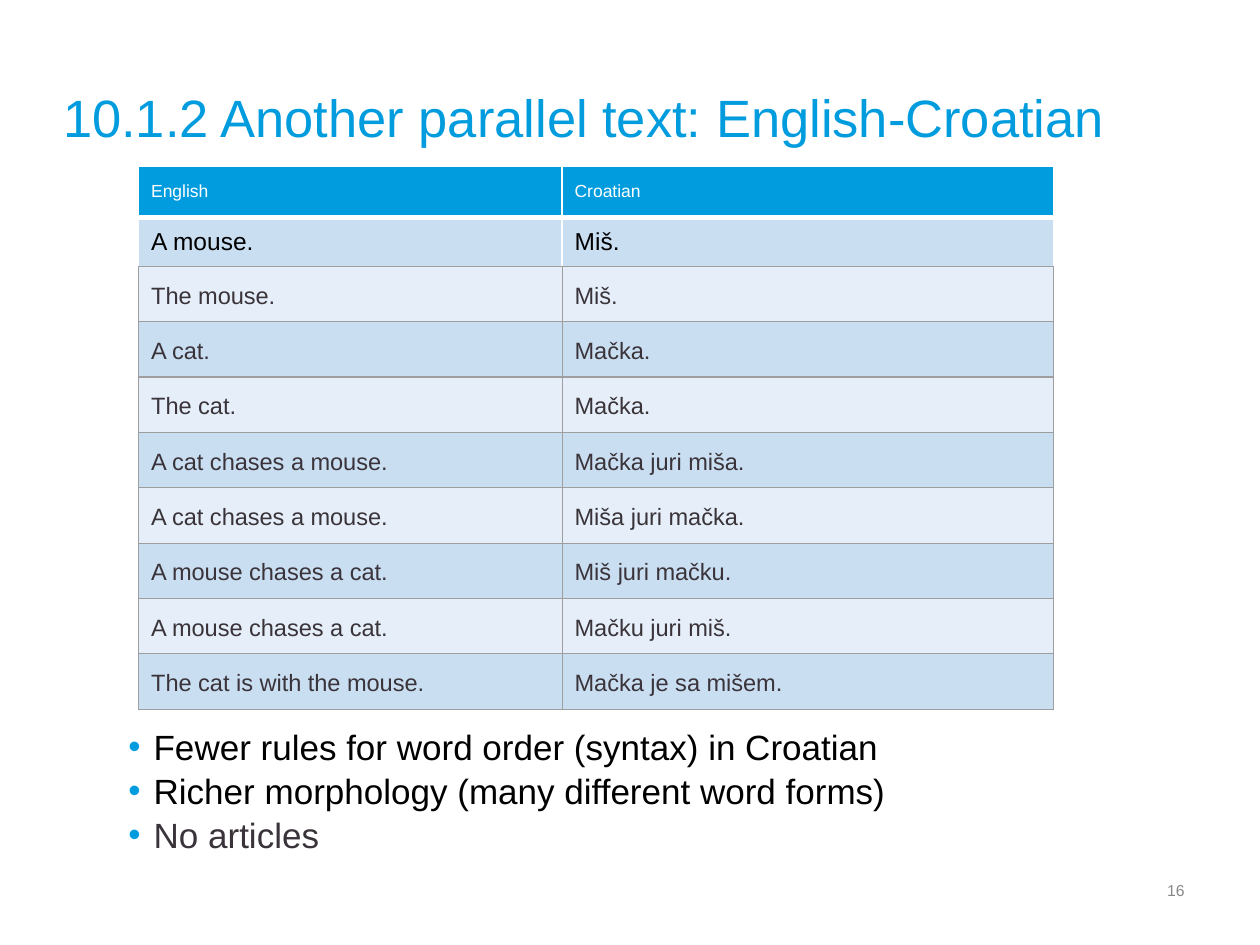
from pptx import Presentation
from pptx.dml.color import RGBColor
from pptx.enum.text import MSO_ANCHOR, MSO_AUTO_SIZE, PP_ALIGN
from pptx.oxml.ns import qn
from pptx.util import Pt
from lxml.etree import SubElement

COLORS = {"blue": "009CDE", "white": "FFFFFF", "black": "000000", "dark": "3A343A",
          "grey": "888888", "rule": "9E9E9E", "band": "CADEF2", "pale": "E6EFF9"}


def style(para, size, color):
    for run in para.runs:
        font = run.font
        font.name, font.size, font.bold = "Arial", Pt(size), False
        font.color.rgb = RGBColor.from_string(COLORS[color])


def border(cell, side, color, width):
    line = SubElement(cell._tc.get_or_add_tcPr(), qn("a:ln" + side), w=str(Pt(width)))
    fill = SubElement(line, qn("a:solidFill"))
    SubElement(fill, qn("a:srgbClr"), val=COLORS[color])


prs = Presentation()
prs.slide_width, prs.slide_height = Pt(720), Pt(540)
slide = prs.slides.add_slide(prs.slide_layouts[1])

# Title
title = slide.shapes.title
title.left, title.top, title.width, title.height = Pt(36), Pt(21.6), Pt(648), Pt(90)
frame = title.text_frame
frame.text = "10.1.2 Another parallel text: English-Croatian"
frame.auto_size = MSO_AUTO_SIZE.NONE
frame.vertical_anchor = MSO_ANCHOR.MIDDLE
frame.margin_left = frame.margin_right = frame.margin_top = frame.margin_bottom = 0
frame.paragraphs[0].alignment = PP_ALIGN.LEFT
style(frame.paragraphs[0], 30, "blue")

# Table of sentence pairs
pairs = [
    ("English", "Croatian"),
    ("A mouse.", "Miš."),
    ("The mouse.", "Miš."),
    ("A cat.", "Mačka."),
    ("The cat.", "Mačka."),
    ("A cat chases a mouse.", "Mačka juri miša."),
    ("A cat chases a mouse.", "Miša juri mačka."),
    ("A mouse chases a cat.", "Miš juri mačku."),
    ("A mouse chases a cat.", "Mačku juri miš."),
    ("The cat is with the mouse.", "Mačka je sa mišem."),
]
heights = [29, 28] + [31.65] * 8
table = slide.shapes.add_table(len(pairs), 2, Pt(79.2), Pt(95.2),
                               Pt(523), Pt(sum(heights))).table
table.columns[0].width, table.columns[1].width = Pt(242), Pt(281)

for r, pair in enumerate(pairs):
    table.rows[r].height = Pt(heights[r])
    plain = r > 1
    edge = ("rule", 0.75) if plain else ("white", 1)
    top = ("white", 3) if r == 1 else ("rule", 0.75) if plain else edge
    base = ("white", 3) if r == 0 else ("rule", 0.75)
    for c, text in enumerate(pair):
        cell = table.cell(r, c)
        for side, rule in zip("LRTB", (edge, edge, top, base)):
            border(cell, side, *rule)
        cell.fill.solid()
        shade = "blue" if r == 0 else "band" if r % 2 else "pale"
        cell.fill.fore_color.rgb = RGBColor.from_string(COLORS[shade])
        cell.text_frame.text = text
        para = cell.text_frame.paragraphs[0]
        if plain:
            cell.margin_top, cell.margin_bottom = Pt(7.2), Pt(6)
            para.line_spacing = 1.15
            style(para, 13.5, "dark")
        else:
            cell.vertical_anchor = MSO_ANCHOR.MIDDLE
            style(para, *((14, "black") if r else (10, "white")))

# Remarks
body = slide.placeholders[1]
body.left, body.top, body.width, body.height = Pt(66.2), Pt(407.5), Pt(480), Pt(87)
frame = body.text_frame
frame.auto_size = MSO_AUTO_SIZE.NONE
frame.margin_left = frame.margin_right = frame.margin_top = frame.margin_bottom = Pt(7.2)
notes = [
    ("Fewer rules for word order (syntax) in Croatian", "black"),
    ("Richer morphology (many different word forms)", "black"),
    ("No articles", "dark"),
]
frame.text = "\n".join(text for text, _ in notes)
for i, (para, (_, color)) in enumerate(zip(frame.paragraphs, notes)):
    para.space_before = Pt(1 if i else 0)
    props = para._p.get_or_add_pPr()
    props.set("marL", str(Pt(14.4)))
    props.set("indent", str(Pt(-14.4)))
    tint = SubElement(props, qn("a:buClr"))
    SubElement(tint, qn("a:srgbClr"), val=COLORS["blue"])
    SubElement(props, qn("a:buFont"), typeface="Arial")
    SubElement(props, qn("a:buChar"), char="•")
    style(para, 20, color)

# Page number
page = slide.shapes.add_textbox(Pt(522), Pt(494.6), Pt(162), Pt(28.8)).text_frame
page.text = "16"
page.word_wrap = True
page.vertical_anchor = MSO_ANCHOR.MIDDLE
page.paragraphs[0].alignment = PP_ALIGN.RIGHT
style(page.paragraphs[0], 9, "grey")

prs.save("out.pptx")
